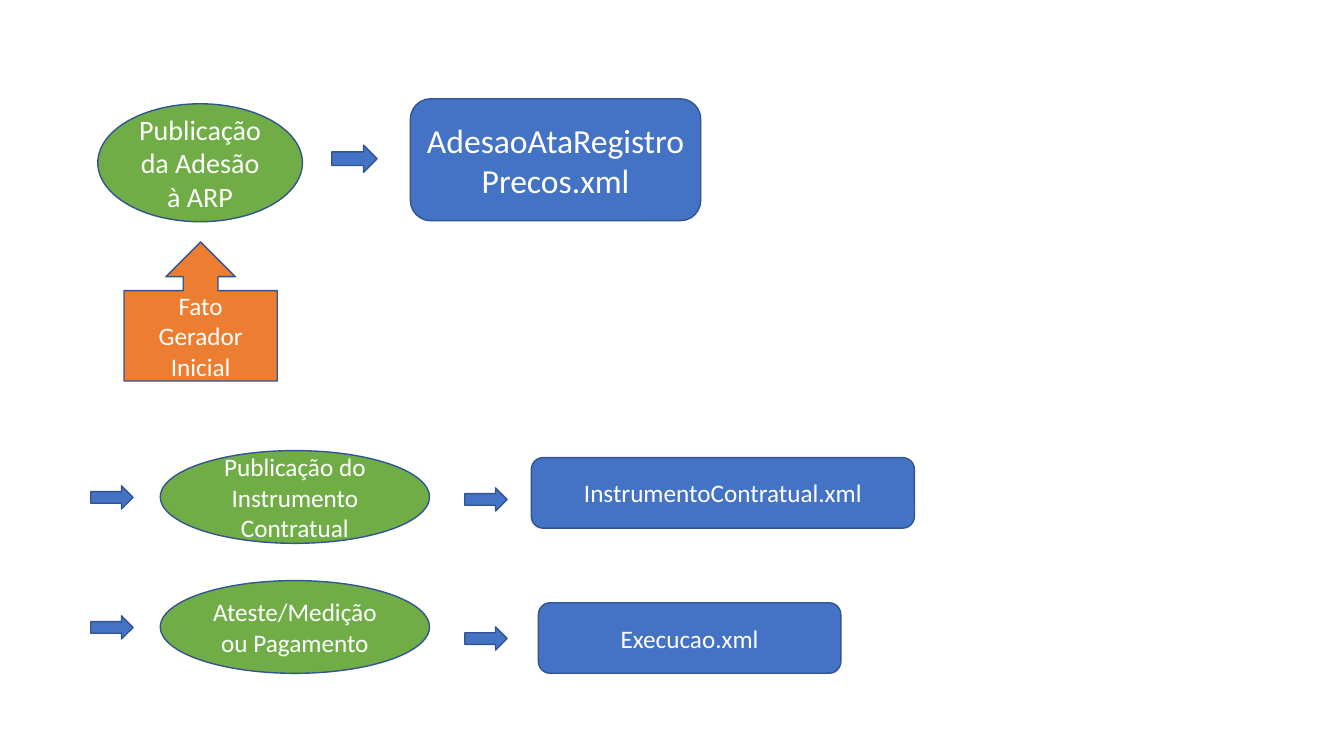
"""Builds a slide showing which XML file each procurement event produces."""
import pptx
import pptx.util
import pptx.dml.color
import pptx.enum.shapes
import pptx.enum.text

Inches = pptx.util.Inches
KIND = pptx.enum.shapes.MSO_SHAPE
COLORS = {"event": "70AD47", "file": "4472C4", "start": "ED7D31",
          "edge": "325491", "text": "FFFFFF"}


def color(name):
    return pptx.dml.color.RGBColor.from_string(COLORS[name])


def draw(kind, fill, box, text="", size=18):
    shape = slide.shapes.add_shape(kind, *[Inches(n) for n in box])
    shape.shadow.inherit = False
    shape.fill.solid()
    shape.fill.fore_color.rgb = color(fill)
    shape.line.color.rgb = color("edge")
    shape.line.width = pptx.util.Pt(1)
    if text:
        frame = shape.text_frame
        frame.word_wrap = True
        frame.vertical_anchor = pptx.enum.text.MSO_ANCHOR.MIDDLE
        para = frame.paragraphs[0]
        para.alignment = pptx.enum.text.PP_ALIGN.CENTER
        run = para.add_run()
        run.text = text
        style = {"name": "Calibri", "size": pptx.util.Pt(size)}
        for key, value in style.items():
            setattr(run.font, key, value)
        run.font.color.rgb = color("text")


deck = pptx.Presentation()
deck.slide_width = Inches(13.33)
deck.slide_height = Inches(7.5)
slide = deck.slides.add_slide(deck.slide_layouts[6])

draw(KIND.OVAL, "event", (0.97, 1.03, 2.03, 1.17), "Publicação da Adesão à ARP", 20)
draw(KIND.ROUNDED_RECTANGLE, "file", (4.07, 0.98, 2.88, 1.21),
     "AdesaoAtaRegistroPrecos.xml", 24)
draw(KIND.RIGHT_ARROW, "file", (3.29, 1.44, 0.45, 0.27))
draw(KIND.UP_ARROW_CALLOUT, "start", (1.23, 2.4, 1.52, 1.38), "Fato Gerador Inicial")

steps = [
    (4.47, "Publicação do Instrumento Contratual",
     (5.27, 4.54, 3.8, 0.7), "InstrumentoContratual.xml", 4.84),
    (5.76, "Ateste/Medição ou Pagamento",
     (5.34, 5.98, 3, 0.7), "Execucao.xml", 6.22),
]
for top, event, box, file, mid in steps:
    draw(KIND.OVAL, "event", (1.59, top, 2.67, 0.92), event)
    draw(KIND.ROUNDED_RECTANGLE, "file", box, file)
    for left, high in ((0.9, top + 0.35), (4.61, mid)):
        draw(KIND.RIGHT_ARROW, "file", (left, high, 0.42, 0.23))

deck.save("out.pptx")
